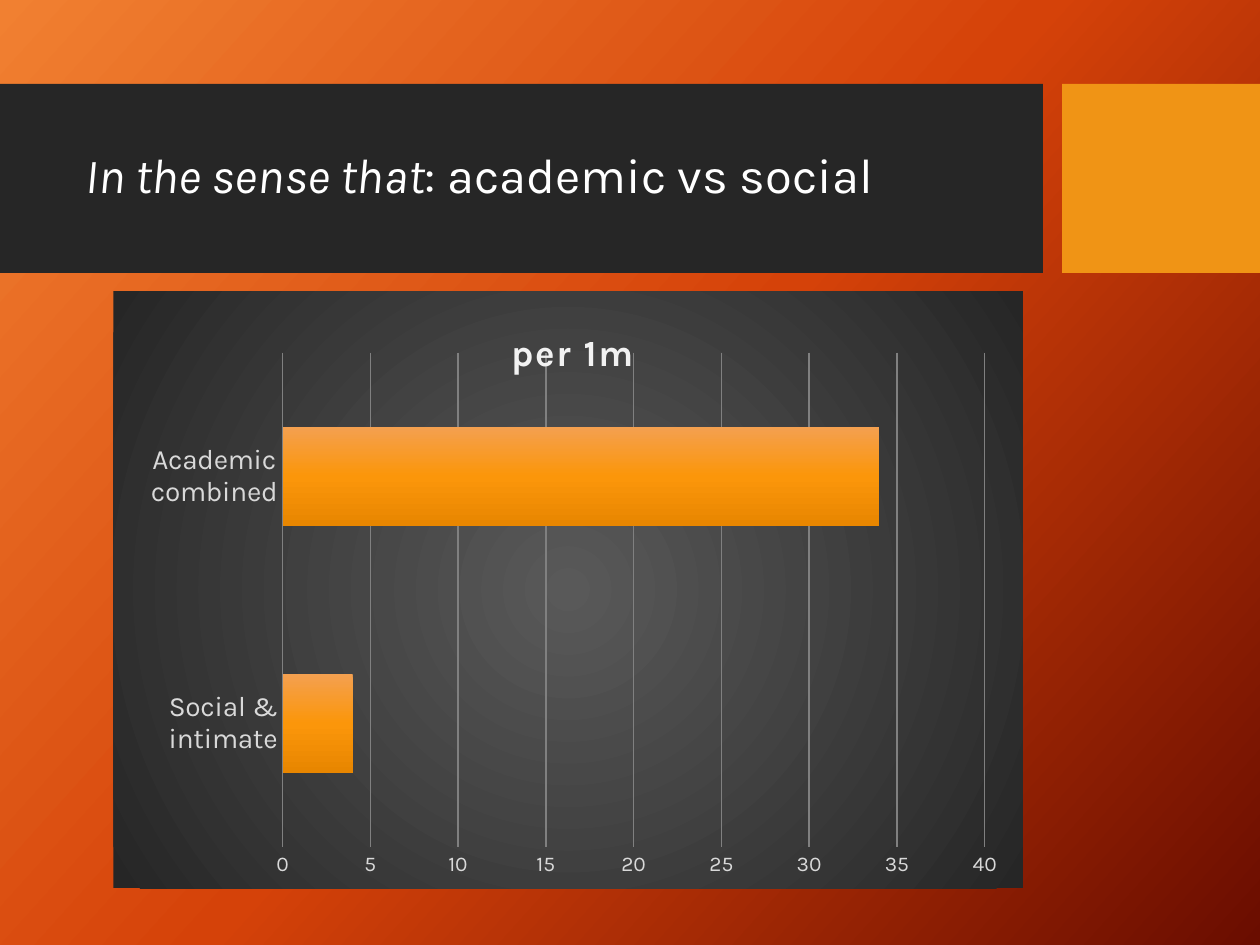
import pptx
import pptx.chart.data
import pptx.dml.color
import pptx.enum.chart
import pptx.enum.shapes
import pptx.enum.text
import pptx.oxml
import pptx.oxml.ns
import pptx.util

Pt = pptx.util.Pt
FONT = "Karla"


def color(value):
    return pptx.dml.color.RGBColor.from_string(value)


def element(tag, content):
    names = pptx.oxml.ns.nsdecls("a", "c")
    return pptx.oxml.parse_xml(f"<{tag} {names}>{content}</{tag}>")


def gradient(stops, direction):
    items = "".join(
        f'<a:gs pos="{position * 1000}"><a:srgbClr val="{value}"/></a:gs>'
        for position, value in stops
    )
    return element("a:gradFill", f"<a:gsLst>{items}</a:gsLst>{direction}")


def linear(angle):
    return f'<a:lin ang="{angle * 60000}" scaled="0"/>'


def layout(x, y, size=None):
    target = '<c:layoutTarget val="inner"/>' if size else ""
    extent = f'<c:w val="{size[0]}"/><c:h val="{size[1]}"/>' if size else ""
    return element(
        "c:layout",
        f'<c:manualLayout>{target}<c:xMode val="edge"/><c:yMode val="edge"/>'
        f'<c:x val="{x}"/><c:y val="{y}"/>{extent}</c:manualLayout>',
    )


def replace_fill(old, new):
    old.getparent().replace(old, new)


class SlideBuilder:
    def __init__(self, deck):
        self.page = deck.slides.add_slide(deck.slide_layouts[6])

    def style(self, font, size, value, bold=False, italic=False):
        font.name = FONT
        font.size = Pt(size)
        font.color.rgb = color(value)
        font.bold = bold
        font.italic = italic

    def background(self, stops, angle):
        self.page.background.fill.solid()
        solid = self.page.element.xpath(".//p:bgPr/a:solidFill")[0]
        replace_fill(solid, gradient(stops, linear(angle)))

    def rectangle(self, left, top, width, height, fill):
        shape = self.page.shapes.add_shape(
            pptx.enum.shapes.MSO_SHAPE.RECTANGLE,
            Pt(left), Pt(top), Pt(width), Pt(height),
        )
        shape.shadow.inherit = False
        shape.fill.solid()
        shape.fill.fore_color.rgb = color(fill)
        shape.line.fill.background()

    def heading(self, left, top, width, height, spans):
        box = self.page.shapes.add_textbox(Pt(left), Pt(top), Pt(width), Pt(height))
        frame = box.text_frame
        frame.word_wrap = True
        frame.vertical_anchor = pptx.enum.text.MSO_ANCHOR.MIDDLE
        para = frame.paragraphs[0]
        para.line_spacing = 0.9
        for text, italic in spans:
            span = para.add_run()
            span.text = text
            self.style(span.font, 28, "FFFFFF", italic=italic)

    def axis(self, axis, size):
        axis.major_tick_mark = pptx.enum.chart.XL_TICK_MARK.NONE
        axis.minor_tick_mark = pptx.enum.chart.XL_TICK_MARK.NONE
        axis.format.line.fill.background()
        self.style(axis.tick_labels.font, size, "D9D9D9")

    def bar_chart(self, left, top, width, height, title, values):
        data = pptx.chart.data.CategoryChartData()
        data.categories = list(values)
        data.add_series("Series 1", list(values.values()))
        chart = self.page.shapes.add_chart(
            pptx.enum.chart.XL_CHART_TYPE.BAR_CLUSTERED,
            Pt(left), Pt(top), Pt(width), Pt(height), data,
        ).chart
        chart.has_legend = False
        self.style(chart.font, 10, "FFFFFF")

        chart.has_title = True
        para = chart.chart_title.text_frame.paragraphs[0]
        span = para.add_run()
        span.text = title
        self.style(span.font, 21, "F2F2F2", bold=True)
        root = chart.element
        root.xpath(".//c:title//a:rPr")[0].set("spc", "100")
        for old in root.xpath(".//c:title/c:layout | .//c:plotArea/c:layout"):
            old.getparent().remove(old)
        root.xpath(".//c:title/c:tx")[0].addnext(layout(0.43, 0.05))
        root.xpath(".//c:plotArea")[0].insert(0, layout(0.186, 0.103, (0.772, 0.828)))

        self.axis(chart.category_axis, 16)
        scale = chart.value_axis
        self.axis(scale, 12)
        scale.minimum_scale, scale.maximum_scale, scale.major_unit = 0, 40, 5
        scale.has_major_gridlines = True
        grid = scale.major_gridlines.format.line
        grid.color.rgb = color("808080")
        grid.width = Pt(0.75)

        plot = chart.plots[0]
        plot.gap_width = 150
        plot.vary_by_categories = False
        plot.series[0].format.fill.solid()
        bars = gradient([(0, "F4A050"), (50, "FB960A"), (100, "E88600")], linear(90))
        replace_fill(root.xpath(".//c:ser/c:spPr/a:solidFill")[0], bars)

        center = (
            '<a:path path="circle">'
            '<a:fillToRect l="50000" t="50000" r="50000" b="50000"/></a:path>'
        )
        panel = element("c:spPr", "<a:ln><a:noFill/></a:ln>")
        panel.insert(0, gradient([(0, "595959"), (100, "262626")], center))
        root.xpath("./c:txPr")[0].addprevious(panel)


def main():
    deck = pptx.Presentation()
    deck.slide_width, deck.slide_height = Pt(720), Pt(540)
    builder = SlideBuilder(deck)
    builder.background([(0, "F18031"), (50, "D54209"), (100, "6A0D00")], 42)
    builder.rectangle(0, 48, 596, 108, "262626")
    builder.rectangle(607, 48, 113, 108, "F09415")
    builder.heading(
        42, 59, 543, 85,
        [("In the sense that", True), (": academic vs social", False)],
    )
    builder.bar_chart(
        64.8, 166.3, 519.8, 341.3, "per 1m",
        {"Social & intimate": 4, "Academic combined": 34},
    )
    deck.save("out.pptx")


if __name__ == "__main__":
    main()
